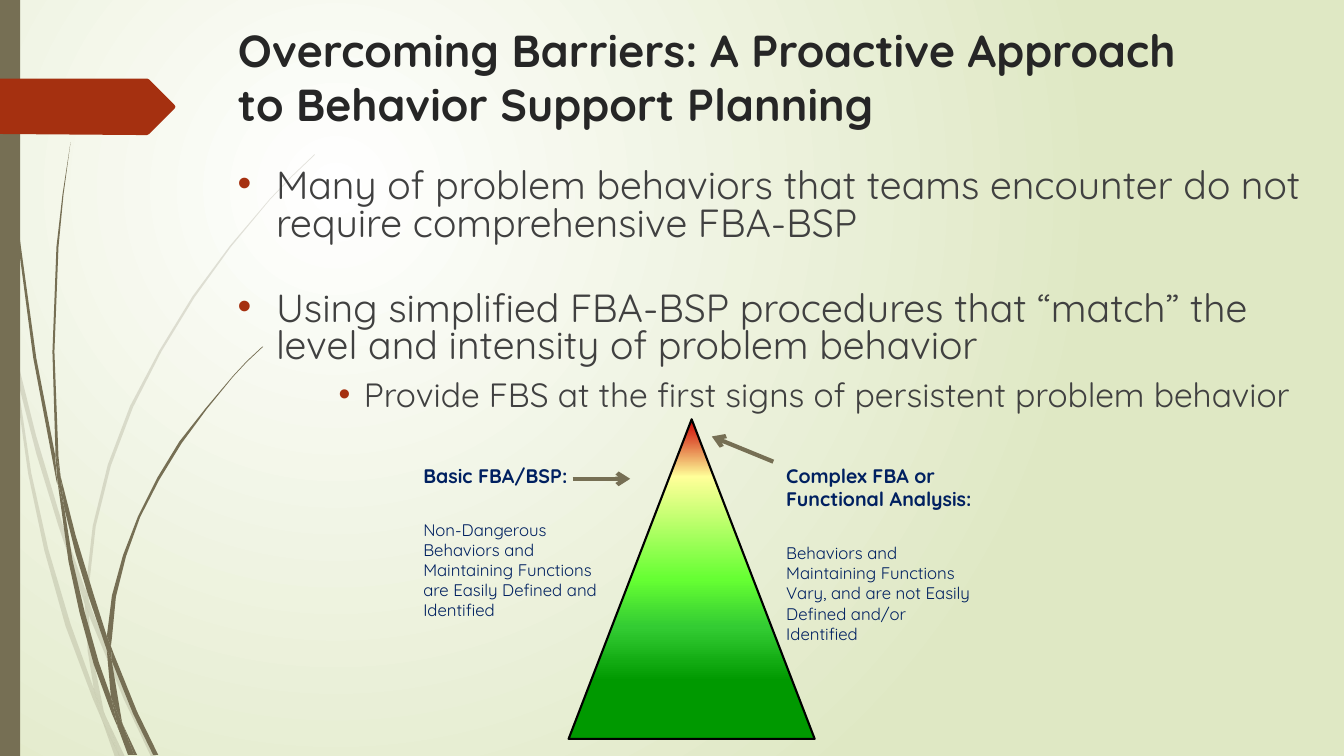
from dataclasses import dataclass

from pptx import Presentation
from pptx.dml.color import RGBColor
from pptx.enum.shapes import MSO_CONNECTOR, MSO_SHAPE
from pptx.enum.text import MSO_ANCHOR, MSO_AUTO_SIZE, PP_ALIGN
from pptx.oxml import parse_xml
from pptx.oxml.ns import nsdecls, qn
from pptx.oxml.xmlchemy import OxmlElement
from pptx.util import Inches, Pt

RECTANGLE, TRAPEZOID = MSO_SHAPE.RECTANGLE, MSO_SHAPE.TRAPEZOID
STRAIGHT = MSO_CONNECTOR.STRAIGHT
TOP, LEFT, NO_AUTOFIT = MSO_ANCHOR.TOP, PP_ALIGN.LEFT, MSO_AUTO_SIZE.NONE
Points = tuple[tuple[float, float], ...]
Stops = tuple[tuple[int, str], ...]


@dataclass(frozen=True)
class Theme:
    font: str = "Quicksand"
    title: str = "262626"
    body: str = "404040"
    label: str = "002060"
    accent: str = "A53010"
    stem: str = "766F54"
    outline: str = "000000"
    title_size: int = 32
    point_size: int = 28
    subpoint_size: int = 24
    heading_size: int = 14
    detail_size: int = 12
    backdrop: Stops = ((0, "FFFFFF"), (100, "DFE8C4"))
    severity: Stops = ((0, "CC0000"), (18, "FFFF99"), (50, "66FF33"), (65, "33CC33"), (82, "009900"))


@dataclass(frozen=True)
class BulletPoint:
    text: str
    size: int
    margin: float
    hanging: float
    space_before: int


@dataclass(frozen=True)
class Label:
    left: float
    height: float
    heading: str
    detail: str


@dataclass(frozen=True)
class Arrow:
    start: tuple[float, float]
    end: tuple[float, float]


@dataclass(frozen=True)
class Plant:
    opacity: int
    blades: tuple[Points, ...]


THEME = Theme()
TITLE = "Overcoming Barriers: A Proactive Approach to Behavior Support Planning"
BULLETS = (
    BulletPoint("Many of problem behaviors that teams encounter do not require comprehensive FBA-BSP",
                THEME.point_size, 0.38, 0.38, 10),
    BulletPoint("Using simplified FBA-BSP procedures that “match” the level and intensity of problem behavior",
                THEME.point_size, 0.38, 0.38, 34),
    BulletPoint("Provide FBS at the first signs of persistent problem behavior",
                THEME.subpoint_size, 1.25, 0.25, 10),
)
LABELS = (
    Label(4.1, 1.99, "Basic FBA/BSP:",
          "Non-Dangerous Behaviors and Maintaining Functions are Easily Defined and Identified"),
    Label(7.7, 2.36, "Complex FBA or Functional Analysis:",
          "Behaviors and Maintaining Functions Vary, and are not Easily Defined and/or Identified"),
)
ARROWS = (Arrow((5.68, 4.75), (6.25, 4.75)), Arrow((7.67, 4.58), (7.06, 4.33)))
RIBBON = ((0, 0.78), (1.46, 0.78), (1.48, 0.79), (1.73, 1.04), (1.74, 1.06), (1.73, 1.08),
          (1.48, 1.33), (1.46, 1.34), (1.36, 1.34), (0, 1.33))
PALE_PLANT = Plant(20, (
    ((0.11, 3.5), (0.09, 3.22), (0, 2.82), (0, 2.99), (0.1, 3.44)),
    ((0.58, 5.22), (0.84, 5.99), (0.85, 5.86), (0.62, 5.2), (0.36, 4.33), (0.14, 3.45), (0.17, 3.76),
     (0.36, 4.5)),
    ((0.92, 6.07), (0.88, 5.96), (0.88, 6.1), (1.23, 6.94), (1.5, 7.51), (1.55, 7.51), (1.27, 6.92)),
    ((1.19, 7.51), (1.24, 7.51), (1.05, 7.11)),
    ((0.93, 6.83), (0.7, 6.19), (0.48, 5.45), (0.31, 4.69), (0.17, 3.76), (0.11, 3.5), (0.28, 4.7),
     (0.44, 5.46), (0.65, 6.21), (0.92, 6.93), (1.01, 7.14), (0.99, 7.07)),
    ((0.84, 5.99), (0.87, 6.46), (0.93, 6.83), (0.96, 6.92), (1.05, 7.11), (1.03, 7.06), (0.91, 6.46),
     (0.88, 6.1), (0.88, 6.08)),
    ((0.88, 5.84), (0.95, 5.22), (1.1, 4.62), (1.32, 4.04), (1.6, 3.49), (1.93, 2.95), (2.29, 2.45),
     (2.68, 1.98), (2.9, 1.75), (3.12, 1.54), (3.12, 1.53), (2.89, 1.75), (2.68, 1.97), (2.28, 2.44),
     (1.91, 2.94), (1.58, 3.48), (1.29, 4.03), (1.07, 4.61), (0.92, 5.22), (0.85, 5.84), (0.85, 5.86),
     (0.88, 5.96)),
    ((1.01, 7.14), (1.14, 7.51), (1.19, 7.51)),
    ((0.88, 6.08), (0.88, 5.96), (0.85, 5.86), (0.84, 5.99)),
    ((0.96, 6.92), (0.93, 6.83), (0.99, 7.07), (1.01, 7.14), (1.19, 7.51), (1.05, 7.11)),
))
DARK_PLANT = Plant(100, (
    ((0.07, 1.1), (0.17, 2.33), (0.33, 3.55), (0.56, 4.77), (0.57, 4.81), (0.55, 4.57), (0.55, 4.53),
     (0.36, 3.55), (0.19, 2.32), (0.08, 1.09), (0.05, 0.48), (0.04, 0), (0.03, 0), (0.04, 0.48)),
    ((0.88, 5.92), (1.06, 6.45), (1.06, 6.31), (0.93, 5.9), (0.75, 5.31), (0.6, 4.72), (0.64, 5.05),
     (0.75, 5.49)),
    ((1.13, 6.49), (1.1, 6.41), (1.11, 6.56), (1.32, 7.08), (1.52, 7.49), (1.57, 7.49), (1.36, 7.06)),
    ((1.1, 6.91), (0.98, 6.57), (0.84, 6.07), (0.72, 5.56), (0.64, 5.05), (0.57, 4.77), (0.68, 5.57),
     (0.79, 6.08), (0.93, 6.59), (1.11, 7.08), (1.17, 7.22), (1.16, 7.17)),
    ((0.6, 4.72), (0.58, 4.53), (0.54, 3.49), (0.58, 2.45), (0.63, 1.93), (0.7, 1.41), (0.62, 1.93),
     (0.56, 2.45), (0.52, 3.49), (0.55, 4.49)),
    ((1.33, 7.49), (1.36, 7.49), (1.22, 7.19)),
    ((0.57, 4.77), (0.64, 5.05), (0.6, 4.72), (0.55, 4.49), (0.55, 4.53)),
    ((1.11, 6.33), (1.15, 5.92), (1.25, 5.52), (1.39, 5.13), (1.58, 4.76), (1.8, 4.4), (2.05, 4.06),
     (2.31, 3.74), (2.45, 3.59), (2.61, 3.44), (2.6, 3.44), (2.45, 3.58), (2.31, 3.73), (2.04, 4.05),
     (1.78, 4.38), (1.56, 4.74), (1.37, 5.12), (1.22, 5.51), (1.11, 5.91), (1.06, 6.31), (1.1, 6.41)),
    ((1.17, 7.22), (1.27, 7.49), (1.31, 7.49)),
    ((1.06, 6.45), (1.1, 6.91), (1.16, 7.06), (1.22, 7.19), (1.21, 7.16), (1.11, 6.56), (1.09, 6.51)),
    ((1.06, 6.45), (1.09, 6.51), (1.11, 6.56), (1.1, 6.41), (1.06, 6.31)),
    ((1.16, 7.06), (1.1, 6.91), (1.16, 7.17), (1.17, 7.22), (1.3, 7.49), (1.33, 7.49), (1.22, 7.19)),
))


def child(parent, tag: str, **attributes):
    element = OxmlElement(tag)
    for key, value in attributes.items():
        element.set(key, str(value))
    parent.append(element)
    return element


def gradient(stops: Stops, direction: str):
    marks = "".join(f'<a:gs pos="{pos * 1000}"><a:srgbClr val="{color}"/></a:gs>' for pos, color in stops)
    return parse_xml(f'<a:gradFill {nsdecls("a")} rotWithShape="1"><a:gsLst>{marks}</a:gsLst>{direction}</a:gradFill>')


def paint_background(slide) -> None:
    background = OxmlElement("p:bg")
    properties = child(background, "p:bgPr")
    properties.append(gradient(THEME.backdrop, '<a:path path="circle"><a:fillToRect l="50000" t="50000" '
                                               'r="100000" b="100000"/></a:path>'))
    child(properties, "a:effectLst")
    slide.element.find(qn("p:cSld")).insert(0, background)


def fill_plain(shape, color: str, opacity: int = 100) -> None:
    shape.shadow.inherit = False
    shape.line.fill.background()
    shape.fill.solid()
    shape.fill.fore_color.rgb = RGBColor.from_string(color)
    if opacity < 100:
        child(shape.element.spPr.find(".//" + qn("a:srgbClr")), "a:alpha", val=opacity * 1000)


def add_outline(shapes, points: Points, color: str, opacity: int = 100) -> None:
    start, *rest = [(Inches(x), Inches(y)) for x, y in points]
    builder = shapes.build_freeform(*start)
    builder.add_line_segments(rest)
    fill_plain(builder.convert_to_shape(), color, opacity)


def write(paragraph, text: str, *, size: int, color: str, bold: bool = False, space_before: int = 0,
          line_spacing: float = 1.0) -> None:
    paragraph.alignment = LEFT
    paragraph.space_before = Pt(space_before)
    paragraph.line_spacing = line_spacing
    run = paragraph.add_run()
    run.text = text
    run.font.name, run.font.size, run.font.bold = THEME.font, Pt(size), bold
    run.font.color.rgb = RGBColor.from_string(color)


def prepare_frame(shape):
    frame = shape.text_frame
    frame.word_wrap, frame.auto_size, frame.vertical_anchor = True, NO_AUTOFIT, TOP
    return frame


def add_frame(slide, *box: float):
    return prepare_frame(slide.shapes.add_textbox(*map(Inches, box)))


def add_title(slide) -> None:
    title = slide.shapes.title
    title.left, title.top, title.width, title.height = map(Inches, (2.26, 0.18, 9.8, 1.25))
    write(prepare_frame(title).paragraphs[0], TITLE, size=THEME.title_size, color=THEME.title, bold=True)


def add_bullets(slide) -> None:
    frame = add_frame(slide, 2.26, 1.63, 11.07, 5.42)
    for number, point in enumerate(BULLETS):
        paragraph = frame.add_paragraph() if number else frame.paragraphs[0]
        write(paragraph, point.text, size=point.size, color=THEME.body,
              space_before=point.space_before, line_spacing=0.8)
        properties = paragraph._p.get_or_add_pPr()
        properties.set("marL", str(Inches(point.margin)))
        properties.set("indent", str(-Inches(point.hanging)))
        child(child(properties, "a:buClr"), "a:srgbClr", val=THEME.accent)
        child(properties, "a:buFont", typeface="Arial")
        child(properties, "a:buChar", char="•")


def add_pyramid(slide) -> None:
    pyramid = slide.shapes.add_shape(TRAPEZOID, *map(Inches, (5.64, 4.16, 2.44, 3.17)))
    pyramid.shadow.inherit = False
    pyramid.adjustments[0] = 0.54
    pyramid.line.color.rgb = RGBColor.from_string(THEME.outline)
    pyramid.line.width = Pt(1.5)
    pyramid.element.spPr.find(qn("a:prstGeom")).addnext(gradient(THEME.severity, '<a:lin ang="5400000" scaled="0"/>'))


def add_arrow(slide, arrow: Arrow) -> None:
    connector = slide.shapes.add_connector(STRAIGHT, *map(Inches, arrow.start + arrow.end))
    connector.line.color.rgb = RGBColor.from_string(THEME.stem)
    connector.line.width = Pt(3)
    child(connector.line._get_or_add_ln(), "a:tailEnd", type="arrow")
    child(connector.element.spPr, "a:effectLst")


def add_label(slide, label: Label) -> None:
    frame = add_frame(slide, label.left, 4.55, 2.06, label.height)
    write(frame.paragraphs[0], label.heading, size=THEME.heading_size, color=THEME.label, bold=True)
    write(frame.add_paragraph(), label.detail, size=THEME.detail_size, color=THEME.label, space_before=23)


def main() -> None:
    deck = Presentation()
    deck.slide_width, deck.slide_height = Inches(13.33), Inches(7.5)
    slide = deck.slides.add_slide(deck.slide_layouts[5])
    paint_background(slide)
    for plant in (PALE_PLANT, DARK_PLANT):
        group = slide.shapes.add_group_shape()
        for blade in plant.blades:
            add_outline(group.shapes, blade, THEME.stem, plant.opacity)
    fill_plain(slide.shapes.add_shape(RECTANGLE, 0, 0, Inches(0.2), Inches(7.5)), THEME.stem)
    add_outline(slide.shapes, RIBBON, THEME.accent)
    add_title(slide)
    add_bullets(slide)
    add_pyramid(slide)
    for arrow in ARROWS:
        add_arrow(slide, arrow)
    for label in LABELS:
        add_label(slide, label)
    deck.save("out.pptx")


if __name__ == "__main__":
    main()
